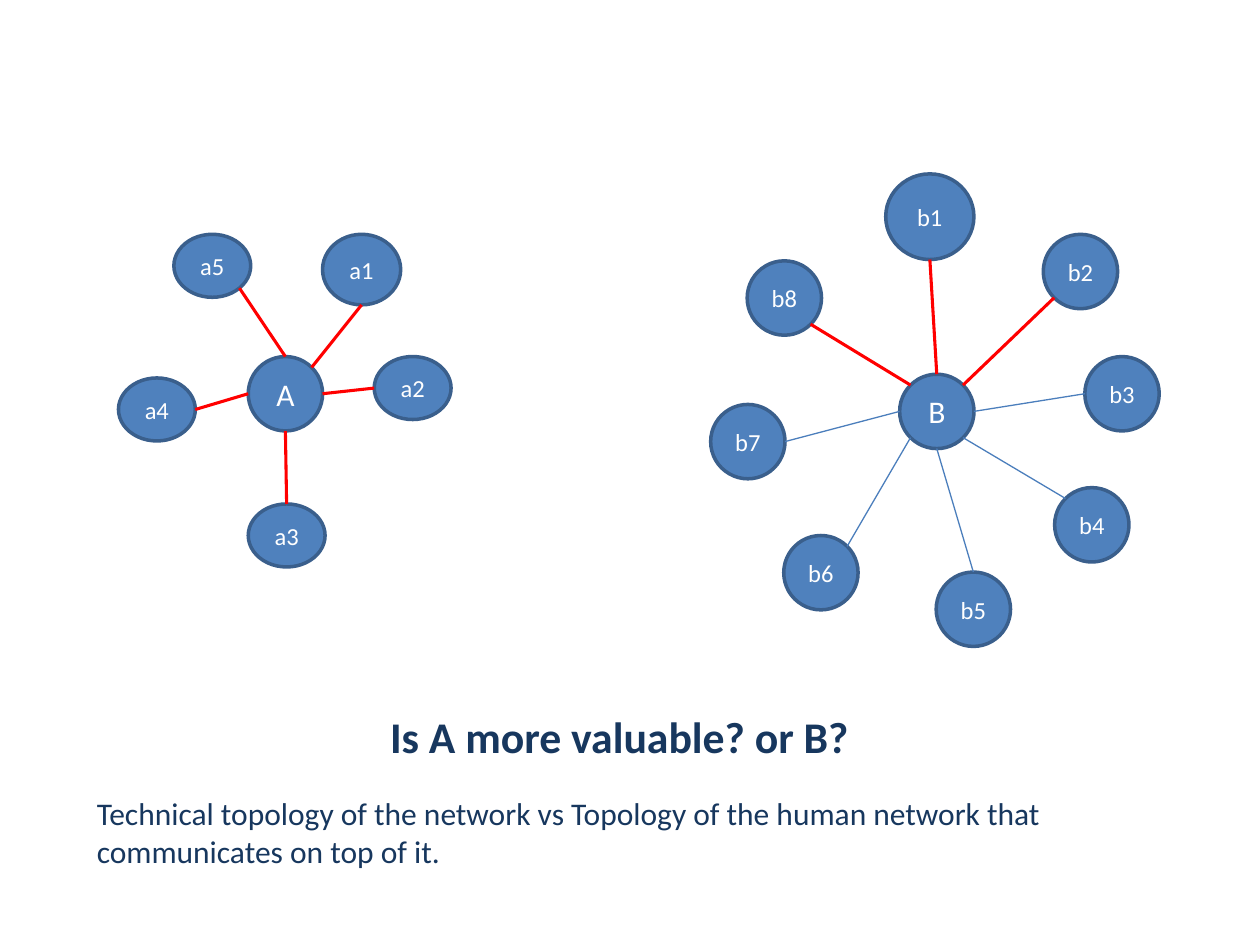
from math import sqrt

from lxml import etree
from pptx import Presentation
from pptx.dml.color import RGBColor
from pptx.enum.shapes import MSO_CONNECTOR, MSO_SHAPE
from pptx.enum.text import MSO_ANCHOR, MSO_AUTO_SIZE, PP_ALIGN
from pptx.oxml.ns import qn
from pptx.util import Inches, Pt

OVAL = MSO_SHAPE.OVAL
LINE = MSO_CONNECTOR.STRAIGHT
TOP, MIDDLE = MSO_ANCHOR.TOP, MSO_ANCHOR.MIDDLE
LEFT, CENTER = PP_ALIGN.LEFT, PP_ALIGN.CENTER
NO_FIT = MSO_AUTO_SIZE.NONE

FONT = "Calibri"
BLUE = RGBColor(0x4F, 0x81, 0xBD)
EDGE = RGBColor(0x3A, 0x5F, 0x8C)
THIN = RGBColor(0x4B, 0x7E, 0xBC)
RED = RGBColor(0xFF, 0x00, 0x00)
NAVY = RGBColor(0x17, 0x37, 0x5E)
WHITE = RGBColor(0xFF, 0xFF, 0xFF)

STRONG = (RED, 1.75)
WEAK = (THIN, 0.75)

# Directions from the centre of an oval to a point on its rim
SITES = {
    "N": (0, -1), "S": (0, 1), "W": (-1, 0), "E": (1, 0),
    "NW": (-1, -1), "NE": (1, -1), "SW": (-1, 1), "SE": (1, 1),
}

# Node boxes are left, top, width, height within the region.
# Spokes: name, box, site on the hub, site on the node, line style
ROUND = (0.59, 0.59)
FLAT = (0.61, 0.5)
HUB_A = ("A", (1.03, 0.97, *ROUND))
SPOKES_A = [
    ("a1", (1.62, 0, 0.62, 0.56), "NE", "S", STRONG),
    ("a2", (2.03, 0.97, *FLAT), "E", "W", STRONG),
    ("a3", (1.03, 2.14, *FLAT), "S", "N", STRONG),
    ("a4", (0, 1.14, *FLAT), "W", "E", STRONG),
    ("a5", (0.44, 0, *FLAT), "N", "SE", STRONG),
]
HUB_B = ("B", (1.5, 1.59, *ROUND))
SPOKES_B = [
    ("b1", (1.39, 0, 0.7, 0.68), "N", "S", STRONG),
    ("b2", (2.64, 0.48, *ROUND), "NE", "SW", STRONG),
    ("b3", (2.97, 1.45, *ROUND), "E", "W", WEAK),
    ("b4", (2.73, 2.49, *ROUND), "SE", "NW", WEAK),
    ("b5", (1.79, 3.16, *ROUND), "S", "N", WEAK),
    ("b6", (0.58, 2.87, *ROUND), "SW", "NE", WEAK),
    ("b7", (0, 1.83, *ROUND), "W", "E", WEAK),
    ("b8", (0.29, 0.69, *ROUND), "NW", "SE", STRONG),
]


def style(frame, text, size, color, align, bold=False):
    frame.text = text
    para = frame.paragraphs[0]
    para.alignment = align
    font = para.runs[0].font
    font.name, font.size, font.bold = FONT, Pt(size), bold
    font.color.rgb = color


def add_node(slide, box, name, size):
    node = slide.shapes.add_shape(OVAL, *map(Inches, box))
    node.shadow.inherit = False
    node.fill.solid()
    node.fill.fore_color.rgb = BLUE
    node.line.color.rgb = EDGE
    node.line.width = Pt(2)
    frame = node.text_frame
    frame.word_wrap = False
    frame.vertical_anchor = MIDDLE
    style(frame, name, size, WHITE, CENTER)


def rim(box, site):
    """Return the point where a site lies on the oval in a box."""
    left, top, width, height = box
    dx, dy = SITES[site]
    norm = 2 * sqrt(dx * dx + dy * dy)
    return left + width * (0.5 + dx / norm), top + height * (0.5 + dy / norm)


def add_link(slide, start, end, color, width):
    link = slide.shapes.add_connector(LINE, *map(Inches, start + end))
    link.line.color.rgb = color
    link.line.width = Pt(width)
    etree.SubElement(link._element.spPr, qn("a:effectLst"))


def add_star(slide, left, top, hub, spokes):
    """Place a hub, its nodes and their links from a region's corner."""
    def shift(box):
        return (left + box[0], top + box[1], *box[2:])

    name, spot = hub
    core = shift(spot)
    add_node(slide, core, name, 18)
    for name, spot, near, far, look in spokes:
        box = shift(spot)
        add_node(slide, box, name, 14)
        add_link(slide, rim(core, near), rim(box, far), *look)


def add_title(slide, box, text):
    title = slide.shapes.title
    title.left, title.top, title.width, title.height = map(Inches, box)
    frame = title.text_frame
    frame.auto_size = NO_FIT
    frame.vertical_anchor = TOP
    style(frame, text, 25, NAVY, CENTER, bold=True)


def add_note(slide, box, text):
    frame = slide.shapes.add_textbox(*map(Inches, box)).text_frame
    frame.word_wrap = True
    style(frame, text, 18, NAVY, LEFT)


def main():
    deck = Presentation()
    deck.slide_width, deck.slide_height = Inches(10), Inches(7.5)
    slide = deck.slides.add_slide(deck.slide_layouts[5])
    add_star(slide, 0.94, 1.86, HUB_A, SPOKES_A)
    add_star(slide, 5.64, 1.38, HUB_B, SPOKES_B)
    add_title(slide, (0.5, 5.58, 8.83, 0.52), "Is A more valuable? or B?")
    add_note(slide, (0.67, 6.25, 8.53, 1.01),
             "Technical topology of the network vs Topology of the human "
             "network that communicates on top of it.")
    deck.save("out.pptx")


if __name__ == "__main__":
    main()
